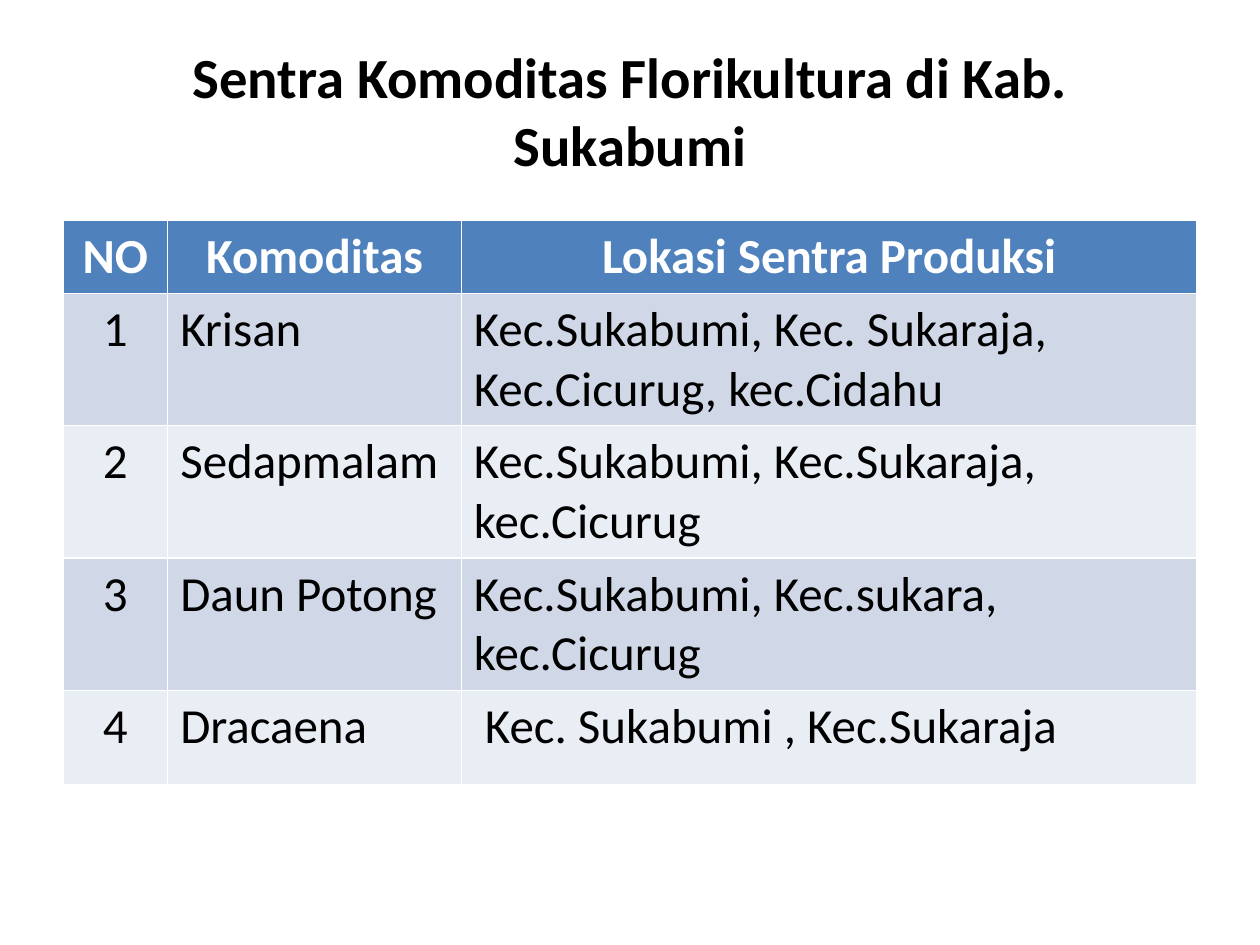
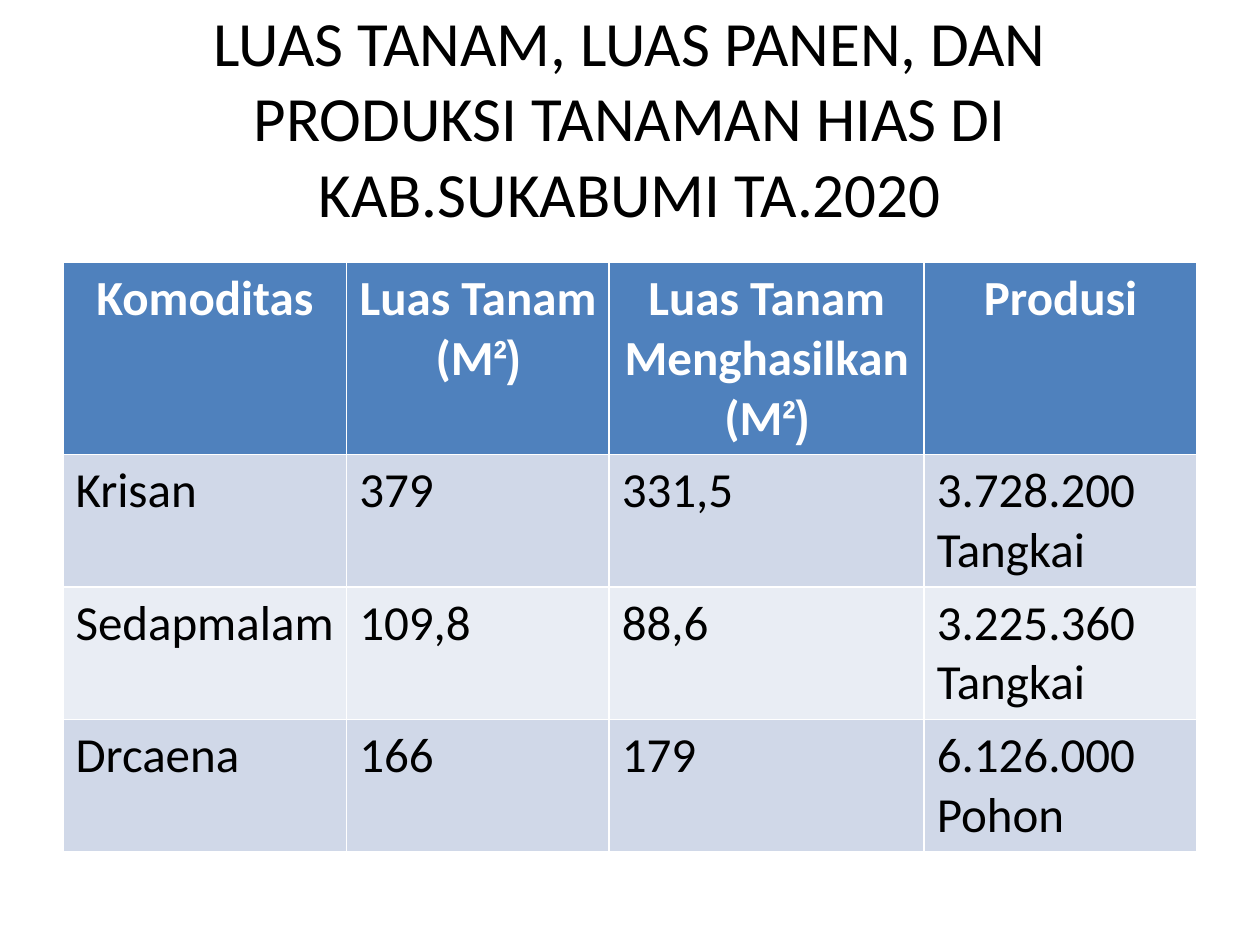
import dataclasses

import pptx
import pptx.dml.color
import pptx.enum.text
import pptx.util

Cm = pptx.util.Cm
Pt = pptx.util.Pt
RGB = pptx.dml.color.RGBColor.from_string
CENTER = pptx.enum.text.PP_ALIGN.CENTER
LEFT = pptx.enum.text.PP_ALIGN.LEFT


@dataclasses.dataclass(frozen=True)
class Theme:
    font: str = "Calibri"
    unit_font: str = "Arial Narrow"
    ink: str = "000000"
    header_ink: str = "FFFFFF"
    header_fill: str = "4F81BD"
    bands: tuple = ("D0D8E8", "E9EDF4")
    table_size: float = 28
    margin: float = 1.27
    width: float = 22.86
    title_height: float = 3.18


THEME = Theme()
SQUARED = ("²)", THEME.unit_font)

SLIDES = [
    {
        "title": "Sentra Komoditas Florikultura di Kab. Sukabumi",
        "title_size": 32.4,
        "title_bold": True,
        "title_top": 0.62,
        "table_top": 4.45,
        "columns": [2.11, 5.92, 14.83],
        "rows": [1.45, 2.66, 2.66, 2.66, 1.9],
        "centered": {0},
        "header": ["NO", "Komoditas", "Lokasi Sentra Produksi"],
        "body": [
            ["1", "Krisan", "Kec.Sukabumi, Kec. Sukaraja, Kec.Cicurug, kec.Cidahu"],
            ["2", "Sedapmalam", "Kec.Sukabumi, Kec.Sukaraja, kec.Cicurug"],
            ["3", "Daun Potong", "Kec.Sukabumi, Kec.sukara, kec.Cicurug"],
            ["4", "Dracaena", " Kec. Sukabumi , Kec.Sukaraja"],
        ],
    },
    {
        "title": "LUAS TANAM, LUAS PANEN, DAN PRODUKSI TANAMAN HIAS DI KAB.SUKABUMI TA.2020",
        "title_size": 36,
        "title_bold": False,
        "title_top": 0.76,
        "table_top": 5.29,
        "columns": [5.72, 5.29, 6.35, 5.5],
        "rows": [3.85, 2.66, 2.66, 2.66],
        "centered": set(),
        "header": [
            "Komoditas",
            [["Luas Tanam"], ["(M", SQUARED]],
            [["Luas Tanam Menghasilkan (M", SQUARED]],
            "Produsi",
        ],
        "body": [
            ["Krisan", "379", "331,5", "3.728.200 Tangkai"],
            ["Sedapmalam", "109,8", "88,6", "3.225.360 Tangkai"],
            ["Drcaena", "166", "179", "6.126.000 Pohon"],
        ],
    },
]


def write(frame, content, size, color, bold, align):
    paras = [[content]] if isinstance(content, str) else content
    for index, spans in enumerate(paras):
        para = frame.add_paragraph() if index else frame.paragraphs[0]
        para.alignment = align
        for item in spans:
            text, font = (item, THEME.font) if isinstance(item, str) else item
            span = para.add_run()
            span.text = text
            span.font.name = font
            span.font.size = Pt(size)
            span.font.bold = bold
            span.font.color.rgb = RGB(color)


def add_title(page, content):
    box = page.shapes.title
    box.left, box.top = Cm(THEME.margin), Cm(content["title_top"])
    box.width, box.height = Cm(THEME.width), Cm(THEME.title_height)
    frame = box.text_frame
    frame.word_wrap = True
    frame.auto_size = pptx.enum.text.MSO_AUTO_SIZE.NONE
    frame.vertical_anchor = pptx.enum.text.MSO_ANCHOR.MIDDLE
    write(frame, content["title"], content["title_size"], THEME.ink,
          content["title_bold"], CENTER)


def add_data_table(page, content):
    columns, rows = content["columns"], content["rows"]
    table = page.shapes.add_table(
        len(rows), len(columns), Cm(THEME.margin), Cm(content["table_top"]),
        Cm(sum(columns)), Cm(sum(rows))).table
    for column, width in zip(table.columns, columns):
        column.width = Cm(width)
    for row, height in zip(table.rows, rows):
        row.height = Cm(height)
    for r, values in enumerate([content["header"], *content["body"]]):
        is_header = r == 0
        fill = THEME.header_fill if is_header else THEME.bands[(r - 1) % 2]
        color = THEME.header_ink if is_header else THEME.ink
        for c, value in enumerate(values):
            cell = table.cell(r, c)
            cell.fill.solid()
            cell.fill.fore_color.rgb = RGB(fill)
            align = CENTER if is_header or c in content["centered"] else LEFT
            write(cell.text_frame, value, THEME.table_size, color, is_header, align)


def main():
    deck = pptx.Presentation()
    deck.slide_width, deck.slide_height = Cm(25.4), Cm(19.05)
    title_only = deck.slide_layouts.get_by_name("Title Only")
    for content in SLIDES:
        page = deck.slides.add_slide(title_only)
        add_title(page, content)
        add_data_table(page, content)
    deck.save("out.pptx")


if __name__ == "__main__":
    main()
